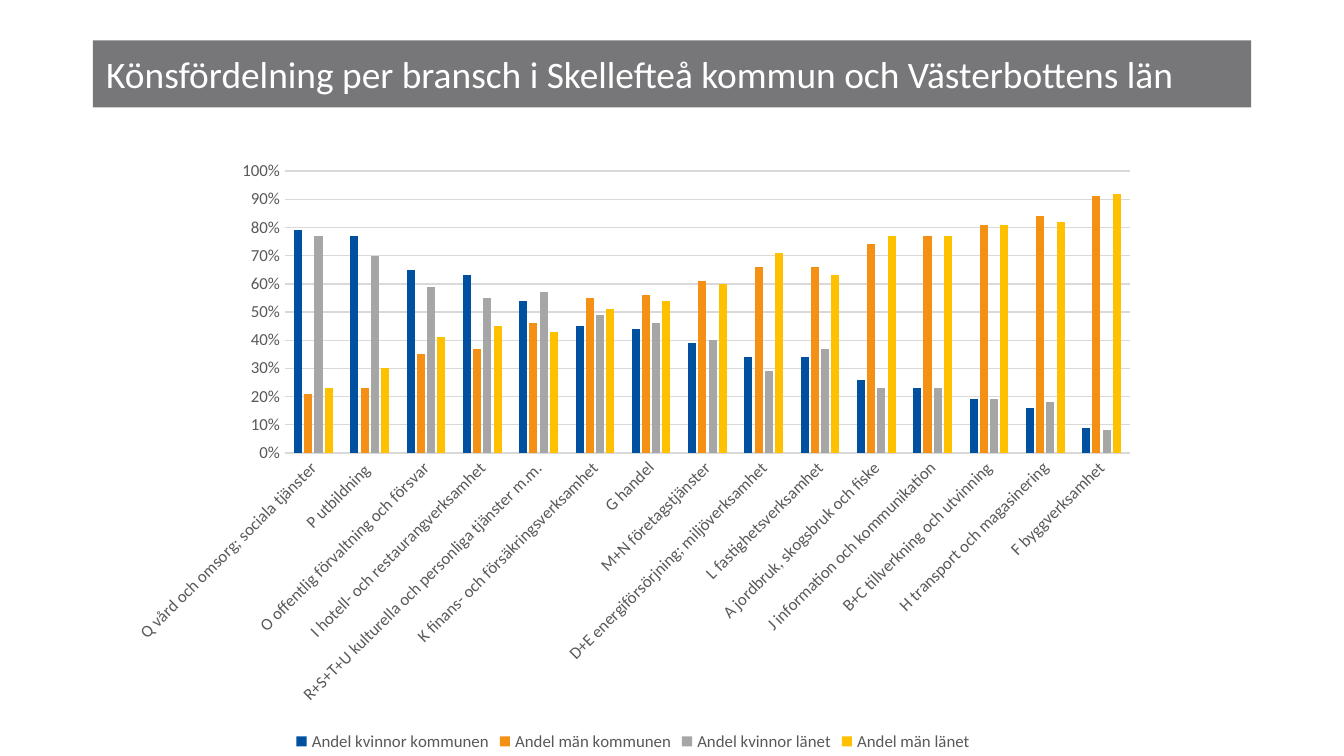
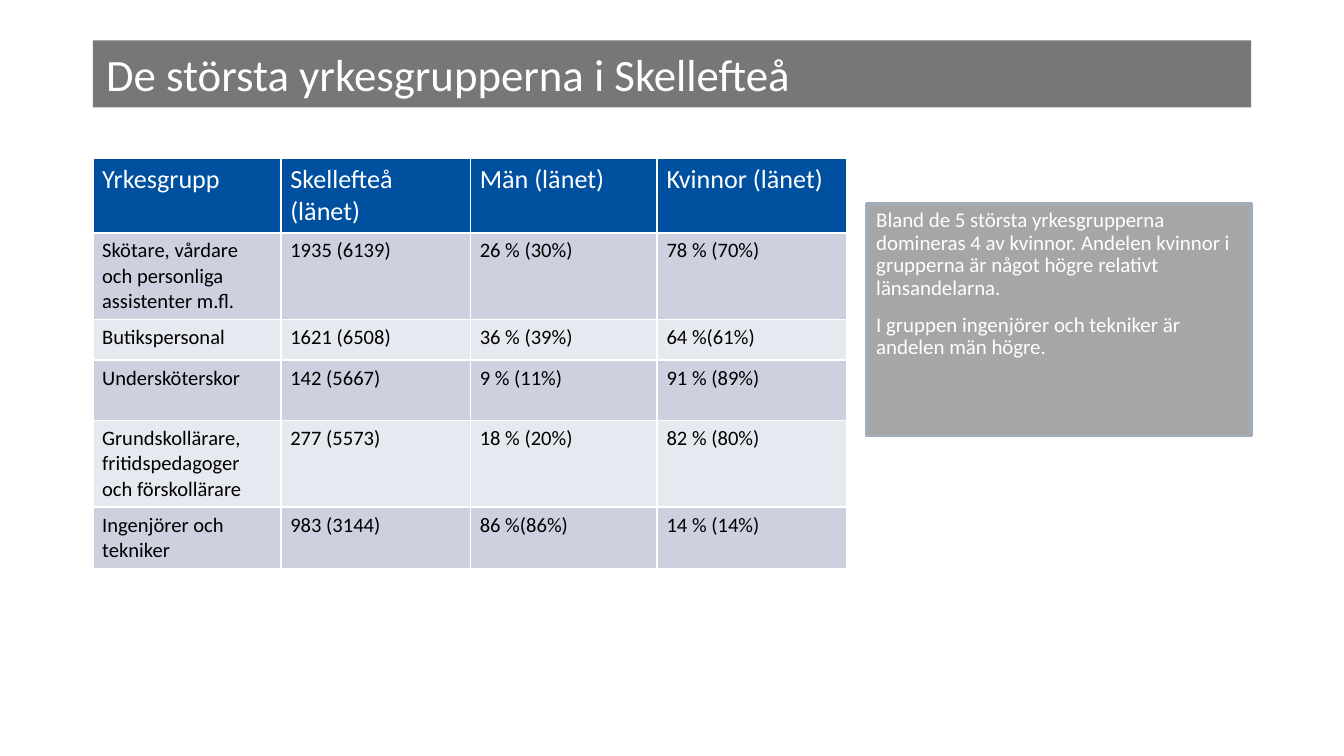
from lxml.etree import SubElement
from pptx import Presentation
from pptx.chart.data import CategoryChartData
from pptx.dml.color import RGBColor
from pptx.enum.chart import XL_CHART_TYPE, XL_LEGEND_POSITION, XL_TICK_MARK
from pptx.enum.shapes import MSO_SHAPE
from pptx.enum.text import MSO_ANCHOR, MSO_AUTO_SIZE, PP_ALIGN
from pptx.oxml import parse_xml
from pptx.oxml.ns import nsdecls, qn
from pptx.util import Inches, Pt

COLORS = {
    "band": "77777A", "white": "FFFFFF", "black": "000000", "blue": "0050A0",
    "orange": "F49014", "gray": "A6A6A6", "yellow": "FFC000", "label": "595959",
    "grid": "D9D9D9", "odd_row": "CCD0DF", "even_row": "E7E9F0", "note_edge": "A3ABB6",
}
INSETS = {
    "margin_left": Inches(0.07), "margin_right": Inches(0.07),
    "margin_top": Inches(0.04), "margin_bottom": Inches(0.04),
}

CATEGORIES = [
    "Q vård och omsorg; sociala tjänster", "P utbildning ",
    "O offentlig förvaltning och försvar", "I hotell- och restaurangverksamhet",
    "R+S+T+U kulturella och personliga tjänster m.m.",
    "K finans- och försäkringsverksamhet", "G handel", "M+N företagstjänster",
    "D+E energiförsörjning; miljöverksamhet", "L fastighetsverksamhet",
    "A jordbruk, skogsbruk och fiske", "J information och kommunikation",
    "B+C tillverkning och utvinning", "H transport och magasinering",
    "F byggverksamhet",
]
SERIES = [
    ("Andel kvinnor kommunen", "blue",
     [0.79, 0.77, 0.65, 0.63, 0.54, 0.45, 0.44, 0.39, 0.34, 0.34, 0.26, 0.23, 0.19, 0.16, 0.09]),
    ("Andel män kommunen", "orange",
     [0.21, 0.23, 0.35, 0.37, 0.46, 0.55, 0.56, 0.61, 0.66, 0.66, 0.74, 0.77, 0.81, 0.84, 0.91]),
    ("Andel kvinnor länet", "gray",
     [0.77, 0.7, 0.59, 0.55, 0.57, 0.49, 0.46, 0.4, 0.29, 0.37, 0.23, 0.23, 0.19, 0.18, 0.08]),
    ("Andel män länet", "yellow",
     [0.23, 0.3, 0.41, 0.45, 0.43, 0.51, 0.54, 0.6, 0.71, 0.63, 0.77, 0.77, 0.81, 0.82, 0.92]),
]
OCCUPATIONS = [
    ["Yrkesgrupp", "Skellefteå (länet)", "Män (länet)", "Kvinnor (länet)"],
    ["Skötare, vårdare och personliga assistenter m.fl.", "1935 (6139)", "26 % (30%)", "78 % (70%)"],
    ["Butikspersonal", "1621 (6508)", "36 % (39%)", "64 %(61%)"],
    ["Undersköterskor", "142 (5667)", "9 % (11%)", "91 % (89%)"],
    ["Grundskollärare, fritidspedagoger och förskollärare", "277 (5573)", "18 % (20%)", "82 % (80%)"],
    ["Ingenjörer och tekniker", "983 (3144)", "86 %(86%)", "14 % (14%)"],
]


def rgb(name):
    return RGBColor.from_string(COLORS[name])


def apply(target, values):
    for name, value in values.items():
        setattr(target, name, value)


def style_font(font, size, color):
    apply(font, {"name": "Calibri", "size": Pt(size), "bold": False})
    font.color.rgb = rgb(color)


def paint(target, color):
    target.fill.solid()
    target.fill.fore_color.rgb = rgb(color)


def outline(line, color, width):
    line.color.rgb = rgb(color)
    line.width = Pt(width)


class SlideBuilder:
    """Builds slides that share one title band, palette and font."""

    def __init__(self, deck):
        self.deck = deck
        self.page = None

    def titled_page(self, text, size):
        self.page = self.deck.slides.add_slide(self.deck.slide_layouts[5])
        title = self.page.shapes.title
        apply(title, {"left": Inches(0.69), "top": Inches(0.3),
                      "width": Inches(8.62), "height": Inches(0.5)})
        paint(title, "band")
        apply(title.text_frame, {"text": text, "word_wrap": True,
                                 "auto_size": MSO_AUTO_SIZE.NONE,
                                 "vertical_anchor": MSO_ANCHOR.MIDDLE})
        para = title.text_frame.paragraphs[0]
        para.alignment = PP_ALIGN.LEFT
        style_font(para.runs[0].font, size, "white")

    def column_chart(self, at, categories, series):
        data = CategoryChartData(number_format="0%")
        data.categories = categories
        for name, _, values in series:
            data.add_series(name, values)
        chart = self.page.shapes.add_chart(
            XL_CHART_TYPE.COLUMN_CLUSTERED, *map(Inches, at), data).chart
        apply(chart, {"has_title": False, "has_legend": True})
        style_font(chart.font, 10, "black")
        apply(chart.legend, {"position": XL_LEGEND_POSITION.BOTTOM, "include_in_layout": False})
        style_font(chart.legend.font, 9, "label")
        plot = chart.plots[0]
        apply(plot, {"gap_width": 219, "overlap": -27, "vary_by_categories": False})
        for bars, (_, color, _) in zip(plot.series, series):
            paint(bars.format, color)
            bars.invert_if_negative = False
        for axis in (chart.category_axis, chart.value_axis):
            apply(axis, {"major_tick_mark": XL_TICK_MARK.NONE,
                         "minor_tick_mark": XL_TICK_MARK.NONE})
            style_font(axis.tick_labels.font, 9, "label")
        outline(chart.category_axis.format.line, "grid", 0.75)
        label_body = chart.category_axis._element.find(qn("c:txPr")).find(qn("a:bodyPr"))
        label_body.set("rot", "-2700000")
        value_axis = chart.value_axis
        apply(value_axis, {"minimum_scale": 0, "maximum_scale": 1, "major_unit": 0.1,
                           "has_major_gridlines": True})
        apply(value_axis.tick_labels, {"number_format": "0%", "number_format_is_linked": False})
        value_axis.format.line.fill.background()
        outline(value_axis.major_gridlines.format.line, "grid", 0.75)

    def cell_borders(self, cell):
        properties = cell._tc.get_or_add_tcPr()
        for index, side in enumerate("LRTB"):
            line = parse_xml(f'<a:ln{side} {nsdecls("a")} w="{Pt(1)}"/>')
            fill = SubElement(line, qn("a:solidFill"))
            SubElement(fill, qn("a:srgbClr"), val=COLORS["white"])
            properties.insert(index, line)

    def table(self, at, widths, heights, rows):
        table = self.page.shapes.add_table(len(rows), len(widths), *map(Inches, at)).table
        for column, width in zip(table.columns, widths):
            column.width = Inches(width)
        for row, height in zip(table.rows, heights):
            row.height = Inches(height)
        for row_index, row in enumerate(rows):
            header = row_index == 0
            fill = "blue" if header else "odd_row" if row_index % 2 else "even_row"
            size, color = (14, "white") if header else (11, "black")
            for column_index, text in enumerate(row):
                cell = table.cell(row_index, column_index)
                apply(cell, {"text": text, **INSETS})
                paint(cell, fill)
                self.cell_borders(cell)
                style_font(cell.text_frame.paragraphs[0].runs[0].font, size, color)

    def note(self, at, texts):
        box = self.page.shapes.add_shape(MSO_SHAPE.RECTANGLE, *map(Inches, at))
        box.shadow.inherit = False
        paint(box, "gray")
        outline(box.line, "note_edge", 2)
        frame = box.text_frame
        apply(frame, {"word_wrap": True, "vertical_anchor": MSO_ANCHOR.TOP, **INSETS})
        for index, text in enumerate(texts):
            para = frame.add_paragraph() if index else frame.paragraphs[0]
            apply(para, {"alignment": PP_ALIGN.LEFT, "line_spacing": 0.9,
                         "space_before": Pt(7.5 if index else 0)})
            span = para.add_run()
            span.text = text
            style_font(span.font, 11.2, "white")


def main():
    deck = Presentation()
    apply(deck, {"slide_width": Inches(10), "slide_height": Inches(10) * 9 // 16})
    builder = SlideBuilder(deck)

    builder.titled_page("Könsfördelning per bransch i Skellefteå kommun och Västerbottens län", 20)
    builder.column_chart((0.86, 1.11, 7.7, 4.52), CATEGORIES, SERIES)

    builder.titled_page("De största yrkesgrupperna i Skellefteå", 24)
    builder.table((0.69, 1.18, 5.61, 2.98), (1.4, 1.41, 1.39, 1.41),
                  (0.53, 0.6, 0.3, 0.45, 0.6, 0.42), OCCUPATIONS)
    builder.note((6.45, 1.52, 2.86, 1.72), [
        "Bland de 5 största yrkesgrupperna domineras 4 av kvinnor. "
        "Andelen kvinnor i grupperna är något högre relativt länsandelarna.",
        "I gruppen ingenjörer och tekniker är andelen män högre.",
    ])
    deck.save("out.pptx")


if __name__ == "__main__":
    main()
